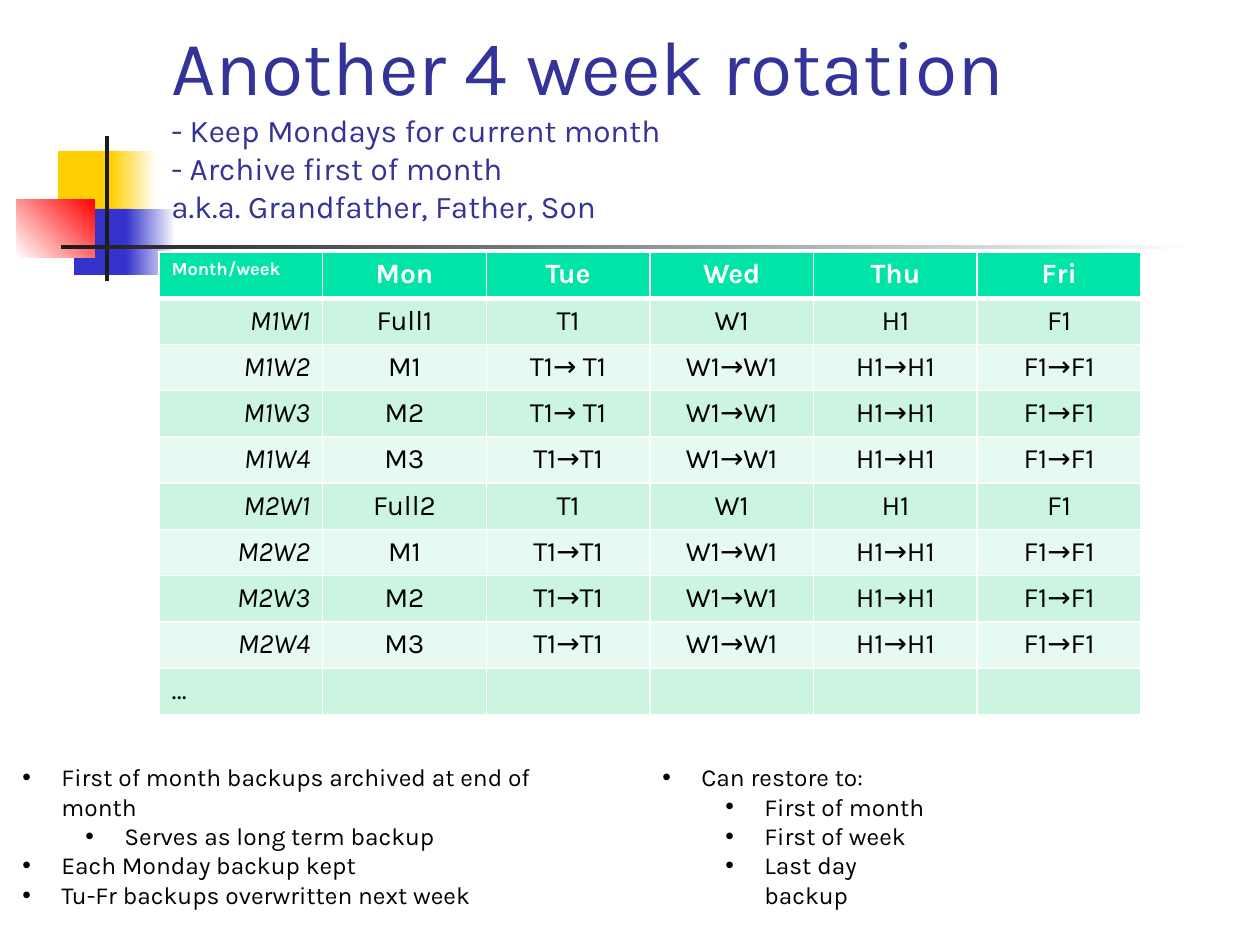
from lxml import etree
from pptx import Presentation
from pptx.dml.color import RGBColor
from pptx.enum.shapes import MSO_SHAPE
from pptx.enum.text import MSO_ANCHOR, PP_ALIGN
from pptx.oxml.ns import qn
from pptx.util import Inches, Pt

RECTANGLE = MSO_SHAPE.RECTANGLE
TOP, BOTTOM = MSO_ANCHOR.TOP, MSO_ANCHOR.BOTTOM
LEFT, CENTER, RIGHT = PP_ALIGN.LEFT, PP_ALIGN.CENTER, PP_ALIGN.RIGHT

FONT = "Karla"
WHITE = RGBColor(0xFF, 0xFF, 0xFF)
BLACK = RGBColor(0x00, 0x00, 0x00)
CHARCOAL = RGBColor(0x1C, 0x1C, 0x1C)
YELLOW = RGBColor(0xFF, 0xCF, 0x01)
BLUE = RGBColor(0x33, 0x33, 0xCC)
RED = RGBColor(0xFF, 0x00, 0x00)
NAVY = RGBColor(0x33, 0x33, 0x99)
GREEN = RGBColor(0x00, 0xE4, 0xA8)
BANDS = (RGBColor(0xCC, 0xF5, 0xE1), RGBColor(0xE7, 0xFA, 0xF1))

DECORATIONS = [
    ((58, 151, 60, 66), (YELLOW,), 0),
    ((111, 151, 45, 66), (YELLOW, WHITE), 0),
    ((74, 209, 58, 66), (BLUE,), 0),
    ((126, 209, 50, 66), (BLUE, WHITE), 0),
    ((17, 199, 78, 59), (WHITE, RED), 45),
    ((105, 136, 4, 145), (CHARCOAL,), 0),
    ((61, 245, 1134, 4), (CHARCOAL, WHITE), 0),
]

TITLE_BOX = (159, 29, 1074, 202)
TITLE = "Another 4 week rotation"
SUBTITLES = [
    "- Keep Mondays for current month",
    "- Archive first of month",
    "a.k.a. Grandfather, Father, Son",
]

TABLE_BOX = (159, 252, 982, 380)
HEADER = ["Month/week", "Mon", "Tue", "Wed", "Thu", "Fri"]
FIRST_WEEK = ["T1", "W1", "H1", "F1"]
REUSED = ["T1→T1", "W1→W1", "H1→H1", "F1→F1"]
REUSED_SPACED = ["T1→ T1"] + REUSED[1:]
ROTATION = [
    HEADER,
    ["M1W1", "Full1"] + FIRST_WEEK,
    ["M1W2", "M1"] + REUSED_SPACED,
    ["M1W3", "M2"] + REUSED_SPACED,
    ["M1W4", "M3"] + REUSED,
    ["M2W1", "Full2"] + FIRST_WEEK,
    ["M2W2", "M1"] + REUSED,
    ["M2W3", "M2"] + REUSED,
    ["M2W4", "M3"] + REUSED,
    ["…"] + [""] * 5,
]

NOTES = [
    ((10, 756, 598, 131), [
        (0, "First of month backups archived at end of month"),
        (1, "Serves as long term backup"),
        (0, "Each Monday backup kept"),
        (0, "Tu-Fr backups overwritten next week"),
    ]),
    ((650, 756, 306, 131), [
        (0, "Can restore to:"),
        (1, "First of month"),
        (1, "First of week"),
        (1, "Last day backup"),
    ]),
]
BULLET_HANG = 39
LEVEL_STEP = 63


def px(length):
    return round(length * Inches(1) / 126)


def place(bounds):
    return [px(length) for length in bounds]


def write(para, text, size=16, color=BLACK, bold=False, italic=False, align=LEFT):
    para.alignment = align
    if not text:
        para._p.get_or_add_endParaRPr().set("sz", str(size * 100))
        return
    span = para.add_run()
    span.text = text
    span.font.name = FONT
    span.font.size = Pt(size)
    span.font.color.rgb = color
    span.font.bold = bold
    span.font.italic = italic


def add_text_frame(slide, bounds, anchor):
    frame = slide.shapes.add_textbox(*place(bounds)).text_frame
    frame.word_wrap = True
    frame.vertical_anchor = anchor
    return frame


def add_decoration(slide, bounds, colors, angle):
    shape = slide.shapes.add_shape(RECTANGLE, *place(bounds))
    shape.shadow.inherit = False
    shape.line.fill.background()
    if len(colors) == 1:
        shape.fill.solid()
        shape.fill.fore_color.rgb = colors[0]
        return
    shape.fill.gradient()
    shape.fill.gradient_angle = angle
    for stop, color, position in zip(shape.fill.gradient_stops, colors, (0, 1)):
        stop.color.rgb = color
        stop.position = position


def add_title(slide):
    para = add_text_frame(slide, TITLE_BOX, BOTTOM).paragraphs[0]
    write(para, TITLE, size=44, color=NAVY)
    for line in SUBTITLES:
        para.add_line_break()
        write(para, line, size=18, color=NAVY)


def set_borders(cell, widths):
    properties = cell._tc.get_or_add_tcPr()
    for side, width in widths.items():
        border = etree.SubElement(properties, qn(f"a:ln{side}"), w=str(Pt(width)))
        fill = etree.SubElement(border, qn("a:solidFill"))
        etree.SubElement(fill, qn("a:srgbClr"), val=str(WHITE))


def cell_format(row, column, text):
    if row == 0:
        style = {"color": WHITE, "bold": True}
        return style | ({"align": CENTER} if column else {"size": 10.5})
    if column:
        return {"align": CENTER}
    return {} if text == "…" else {"align": RIGHT, "italic": True}


def add_rotation_table(slide):
    left, top, width, height = TABLE_BOX
    table = slide.shapes.add_table(
        len(ROTATION), len(HEADER), *place((left, top, width, height))
    ).table
    for column in table.columns:
        column.width = px(width / len(HEADER))
    for row, texts in enumerate(ROTATION):
        table.rows[row].height = px(height / len(ROTATION))
        for column, text in enumerate(texts):
            cell = table.cell(row, column)
            set_borders(cell, {
                "L": 1, "R": 1, "T": 3 if row == 1 else 1, "B": 1 if row else 3,
            })
            cell.fill.solid()
            cell.fill.fore_color.rgb = BANDS[(row - 1) % 2] if row else GREEN
            cell.vertical_anchor = TOP
            para = cell.text_frame.paragraphs[0]
            write(para, text, **cell_format(row, column, text))


def add_notes(slide, bounds, items):
    frame = add_text_frame(slide, bounds, TOP)
    for index, (level, text) in enumerate(items):
        para = frame.add_paragraph() if index else frame.paragraphs[0]
        write(para, text, size=14)
        para.level = level
        properties = para._p.get_or_add_pPr()
        properties.set("marL", str(px(BULLET_HANG + level * LEVEL_STEP)))
        properties.set("indent", str(-px(BULLET_HANG)))
        etree.SubElement(properties, qn("a:buFont"), typeface="Arial")
        etree.SubElement(properties, qn("a:buChar"), char="•")


def main():
    deck = Presentation()
    deck.slide_width, deck.slide_height = px(1260), px(945)
    page = deck.slides.add_slide(deck.slide_layouts[6])
    for bounds, colors, angle in DECORATIONS:
        add_decoration(page, bounds, colors, angle)
    add_title(page)
    add_rotation_table(page)
    for bounds, items in NOTES:
        add_notes(page, bounds, items)
    deck.save("out.pptx")


if __name__ == "__main__":
    main()
